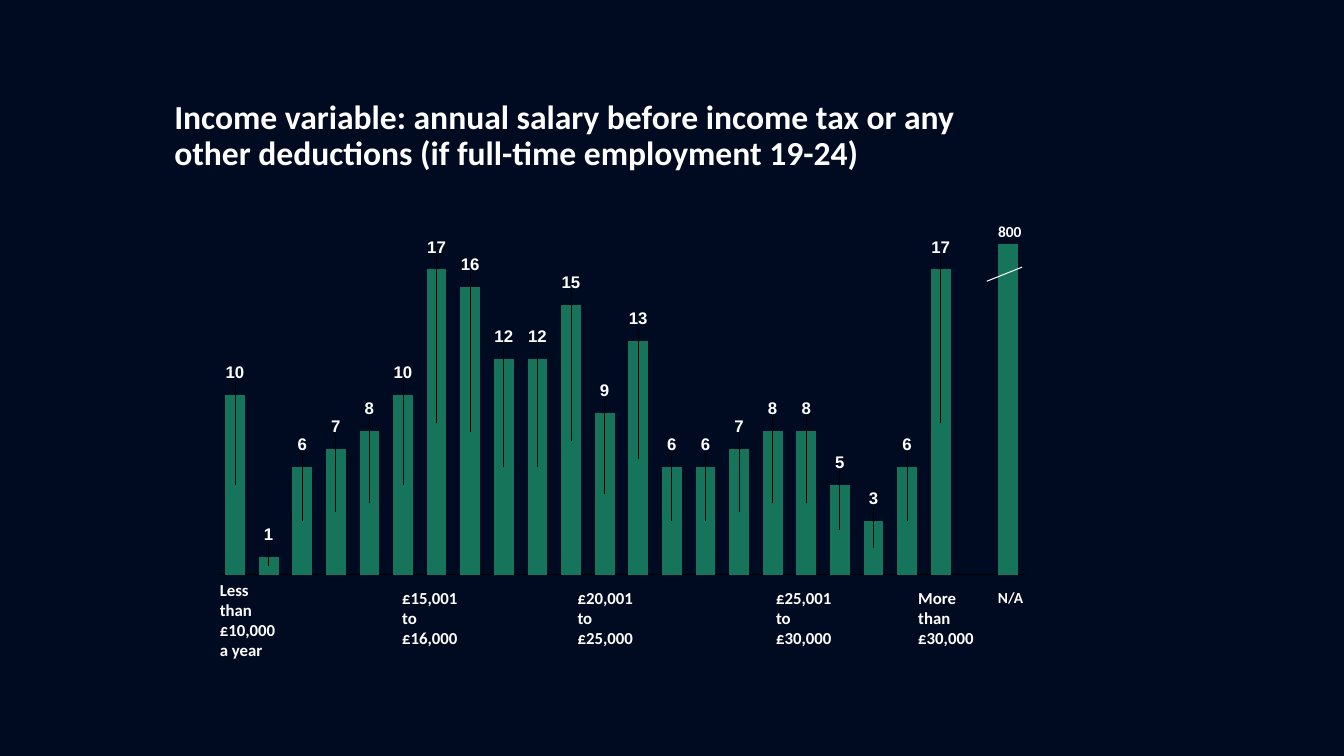
from dataclasses import dataclass
from typing import Any

from pptx import Presentation
from pptx.chart.data import CategoryChartData
from pptx.dml.color import RGBColor
from pptx.enum.chart import XL_CHART_TYPE, XL_LABEL_POSITION, XL_TICK_LABEL_POSITION, XL_TICK_MARK
from pptx.enum.shapes import MSO_CONNECTOR
from pptx.enum.text import MSO_ANCHOR, PP_ALIGN
from pptx.oxml import parse_xml
from pptx.oxml.ns import nsdecls
from pptx.oxml.xmlchemy import OxmlElement
from pptx.util import Pt

STACKED = XL_CHART_TYPE.COLUMN_STACKED
LABEL_CENTER = XL_LABEL_POSITION.CENTER
NO_LABELS = XL_TICK_LABEL_POSITION.NONE
NO_TICKS = XL_TICK_MARK.NONE
STRAIGHT = MSO_CONNECTOR.STRAIGHT
TOP, MIDDLE, BOTTOM = MSO_ANCHOR.TOP, MSO_ANCHOR.MIDDLE, MSO_ANCHOR.BOTTOM
LEFT, CENTER = PP_ALIGN.LEFT, PP_ALIGN.CENTER

AXIS_MAX = 18.43
PLOT = {"x": 0.02, "y": 0.068, "w": 0.971, "h": 0.895}
LABEL_RISE = 0.06
RESPONDENTS = [10, 1, 6, 7, 8, 10, 17, 16, 12, 12, 15, 9,
               13, 6, 6, 7, 8, 8, 5, 3, 6, 17, None, AXIS_MAX]
SALARY_BANDS = [
    (157, 414, 40.3, 53.3, ["Less than £10,000 a year"]),
    (287.3, 419.8, 41, 39.6, ["£15,001 to £16,000"]),
    (412.6, 419.8, 41, 39.6, ["£20,001", "to", "£25,000"]),
    (554.4, 419.8, 41, 39.6, ["£25,001", "to", "£30,000"]),
    (655.9, 419.8, 41, 39.6, ["More than £30,000"]),
]


@dataclass(frozen=True)
class Theme:
    background: RGBColor = RGBColor(0x00, 0x0B, 0x22)
    text: RGBColor = RGBColor(0xFF, 0xFF, 0xFF)
    bar: RGBColor = RGBColor(0x16, 0x74, 0x5A)
    axis: RGBColor = RGBColor(0, 0, 0)
    text_font: str = "Calibri"
    chart_font: str = "Arial"
    title_size: int = 24
    label_size: int = 12
    small_size: int = 11


def assign(target, values):
    for name, value in values.items():
        setattr(target, name, value)


def manual_layout(**values):
    fields = "".join(f'<c:{name} val="{value}"/>' for name, value in values.items())
    return parse_xml(f'<c:layout {nsdecls("c")}><c:manualLayout>{fields}</c:manualLayout></c:layout>')


@dataclass
class SlideBuilder:
    theme: Theme
    slide: Any

    def background(self):
        fill = self.slide.background.fill
        fill.solid()
        fill.fore_color.rgb = self.theme.background

    def style_font(self, font, name, size, color):
        assign(font, {"name": name, "size": Pt(size), "bold": True})
        font.color.rgb = color

    def text(self, left, top, width, height, lines, size, anchor=TOP,
             align=LEFT, inset=(0, 0), spacing=1.0, wrap=True):
        frame = self.slide.shapes.add_textbox(Pt(left), Pt(top), Pt(width), Pt(height)).text_frame
        across, down = map(Pt, inset)
        assign(frame, {"word_wrap": wrap, "vertical_anchor": anchor,
                       "margin_left": across, "margin_right": across,
                       "margin_top": down, "margin_bottom": down})
        frame.text = "\n".join(lines)
        for paragraph in frame.paragraphs:
            assign(paragraph, {"alignment": align, "line_spacing": spacing})
            self.style_font(paragraph.runs[0].font, self.theme.text_font, size, self.theme.text)

    def columns(self, left, top, width, height, values):
        data = CategoryChartData()
        data.categories = [str(number) for number in range(1, len(values) + 1)]
        data.add_series("Series 1", values)
        chart = self.slide.shapes.add_chart(
            STACKED, Pt(left), Pt(top), Pt(width), Pt(height), data).chart
        assign(chart, {"has_legend": False, "has_title": False})
        self.style_font(chart.font, self.theme.chart_font, self.theme.label_size, self.theme.axis)
        for axis in (chart.category_axis, chart.value_axis):
            assign(axis, {"has_major_gridlines": False, "tick_label_position": NO_LABELS,
                          "major_tick_mark": NO_TICKS, "minor_tick_mark": NO_TICKS})
        assign(chart.value_axis, {"minimum_scale": 0, "maximum_scale": AXIS_MAX})
        chart.value_axis.format.line.fill.background()
        baseline = chart.category_axis.format.line
        baseline.color.rgb = self.theme.axis
        baseline.width = Pt(1)
        bars = chart.plots[0]
        assign(bars, {"gap_width": 70, "overlap": 100, "vary_by_categories": False})
        plot_area = chart._chartSpace.chart.plotArea
        for old_layout in plot_area.xpath("c:layout"):
            plot_area.remove(old_layout)
        plot_area.insert(0, manual_layout(layoutTarget="inner", xMode="edge", yMode="edge", **PLOT))
        salaries = bars.series[0]
        salaries.format.fill.solid()
        salaries.format.fill.fore_color.rgb = self.theme.bar
        self.value_labels(salaries, values)

    def value_labels(self, series, values):
        labels = series.data_labels
        assign(labels, {"show_value": True, "position": LABEL_CENTER})
        self.style_font(labels.font, self.theme.chart_font, self.theme.label_size, self.theme.text)
        for index, value in enumerate(values):
            if value is None:
                continue
            label = series.points[index].data_label
            self.style_font(label.font, self.theme.chart_font, self.theme.label_size, self.theme.text)
            label.position = LABEL_CENTER
            element = series._element.xpath(f"c:dLbls/c:dLbl[c:idx/@val='{index}']")[0]
            rise = PLOT["h"] * value / AXIS_MAX / 2 + LABEL_RISE
            element.insert(1, manual_layout(x=0, y=round(-rise, 4)))
            if value == AXIS_MAX:
                element.xpath("c:showVal")[0].set("val", "0")

    def line(self, x1, y1, x2, y2):
        stroke = self.slide.shapes.add_connector(STRAIGHT, Pt(x1), Pt(y1), Pt(x2), Pt(y2))
        stroke.line.color.rgb = self.theme.text
        stroke.line.width = Pt(0.75)
        stroke._element.spPr.append(OxmlElement("a:effectLst"))


def main():
    deck = Presentation()
    assign(deck, {"slide_width": Pt(960), "slide_height": Pt(540)})
    theme = Theme()
    page = SlideBuilder(theme, deck.slides.add_slide(deck.slide_layouts[6]))
    page.background()
    page.text(117.4, 52.6, 583.2, 90,
              ["Income variable: annual salary before income tax or any "
               "other deductions (if full-time employment 19-24)"],
              theme.title_size, anchor=MIDDLE, inset=(7.2, 3.6), spacing=0.9)
    page.columns(144, 156.2, 593.3, 264.2, RESPONDENTS)
    for left, top, width, height, lines in SALARY_BANDS:
        page.text(left, top, width, height, lines, theme.label_size)
    page.text(712.8, 419.8, 19.4, 13, ["N/A"], theme.small_size, wrap=False)
    page.text(712, 159.1, 18.7, 13, ["800"], theme.small_size,
              anchor=BOTTOM, align=CENTER, wrap=False)
    page.line(704.9, 200.9, 730.1, 190.8)
    deck.save("out.pptx")


if __name__ == "__main__":
    main()
